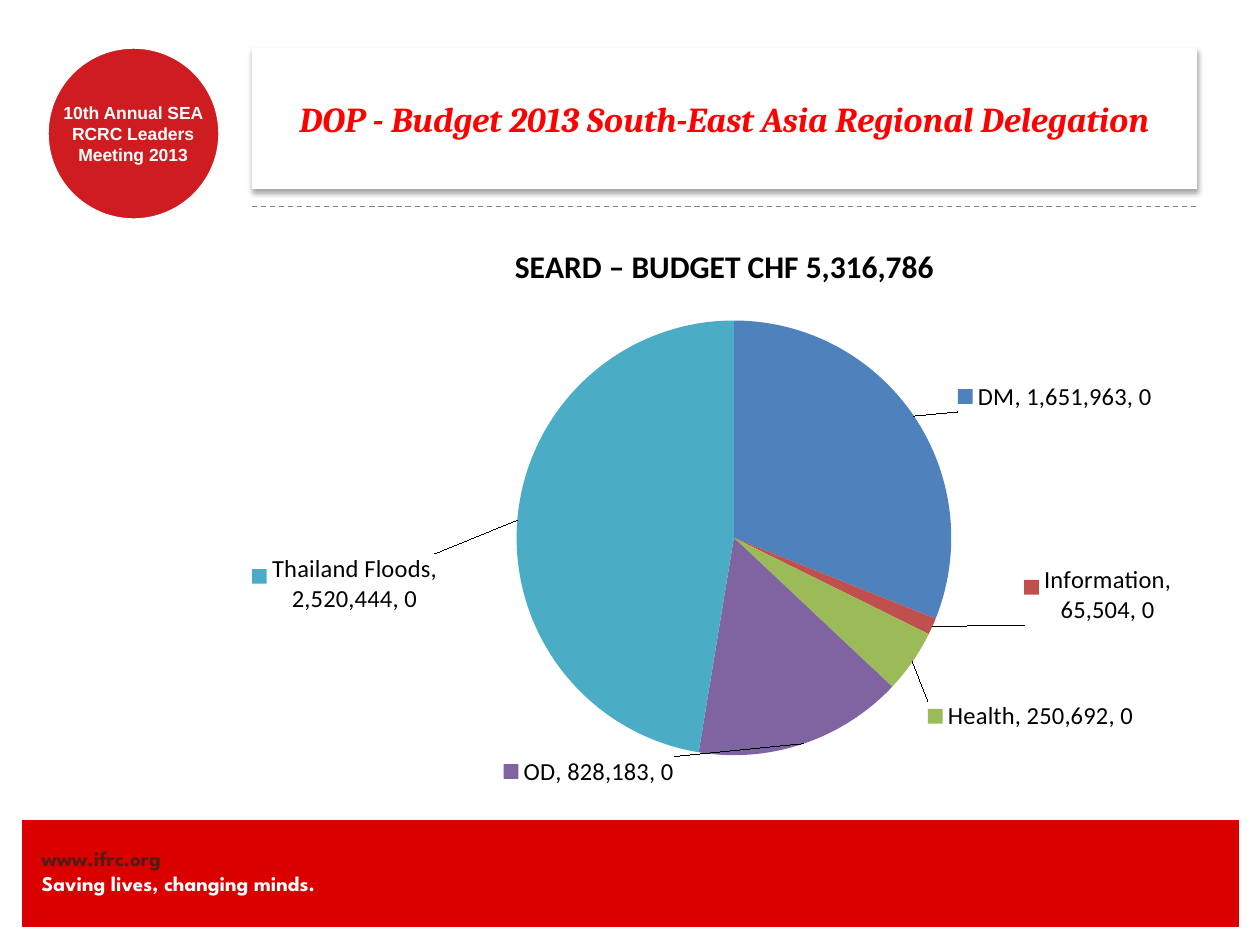
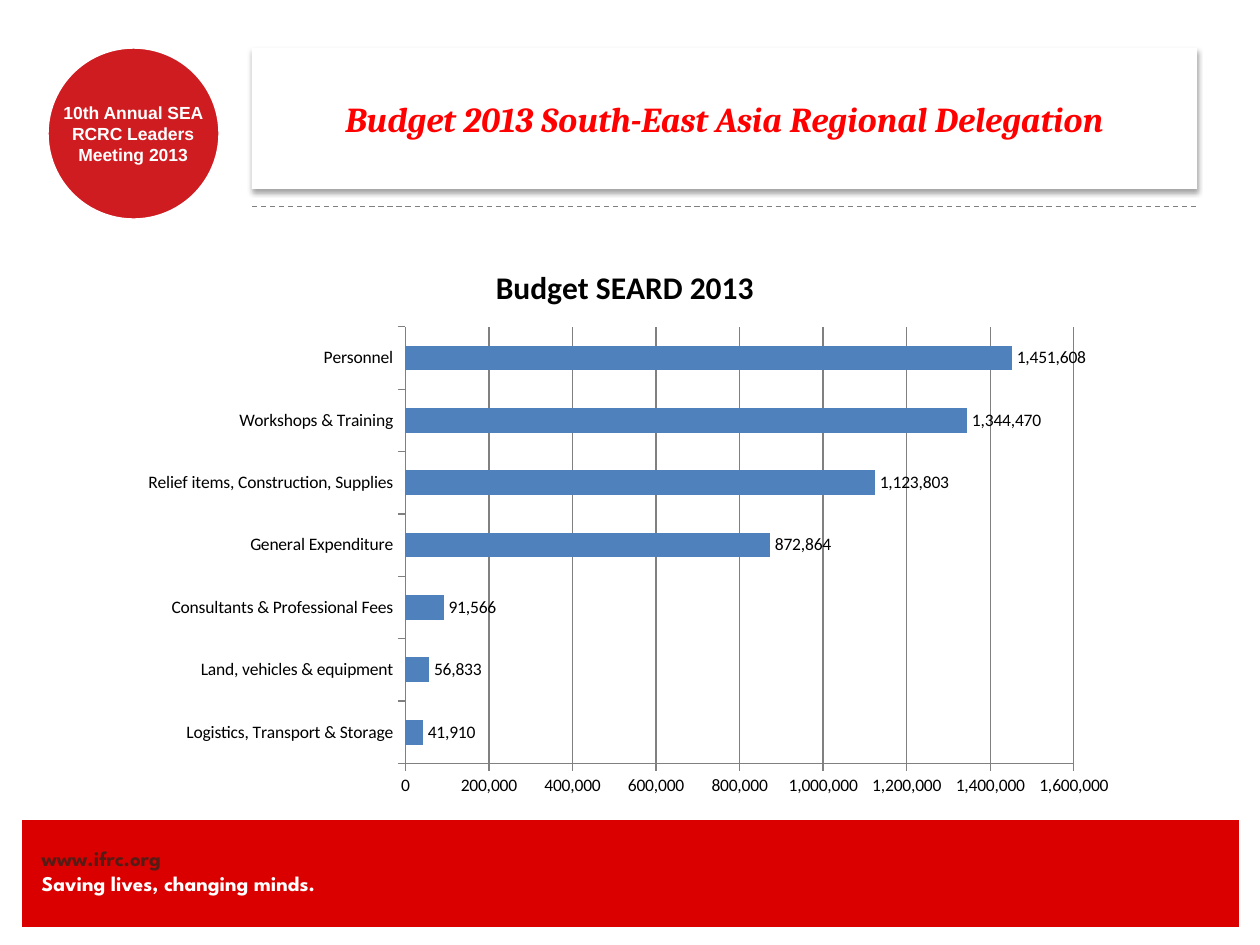
from lxml import etree
from pptx import Presentation, util as u
from pptx.chart.data import CategoryChartData
from pptx.dml.color import RGBColor
from pptx.enum import chart as ec, dml, shapes, text
from pptx.oxml import parse_xml
from pptx.oxml.ns import nsdecls, qn

Pt = u.Pt
HUES = {
    "band": "DB0000", "badge": "CF1C21", "title": "FF0000", "link": "551C15",
    "rule": "808080", "white": "FFFFFF", "black": "000000",
    "blue": "4F81BD", "red": "C0504D", "green": "9BBB59",
    "purple": "8064A2", "teal": "4BACC6",
}
# Text formats
HEAD = dict(name="Cambria", size=Pt(20), bold=True, italic=True)
SEAL = dict(name="Arial", size=Pt(10), bold=True)
FOOT = dict(name="League Spartan", size=Pt(12), bold=True)
CHART = dict(name="Calibri", size=Pt(10))
LABEL = dict(name="Calibri", size=Pt(14))
CAP = dict(name="Calibri", size=Pt(18), bold=True)

# Pie slices: name, amount, colour, label shift as a share of the chart
SLICES = [
    ("DM", 1651963, "blue", 0.04, 0),
    ("Information", 65504, "red", 0.09, -0.11),
    ("Health", 250692, "green", 0.01, 0.06),
    ("OD", 828183, "purple", -0.32, 0.01),
    ("Thailand Floods", 2520444, "teal", -0.08, 0.11),
]
# Bars, from the bottom up
COSTS = {
    "Logistics, Transport & Storage": 41910,
    "Land, vehicles & equipment": 56833,
    "Consultants & Professional Fees": 91566,
    "General Expenditure": 872864,
    "Relief items, Construction, Supplies": 1123803,
    "Workshops & Training": 1344470,
    "Personnel": 1451608,
}


def hue(name):
    return RGBColor.from_string(HUES[name])


def put(obj, vals):
    for key, val in vals.items():
        setattr(obj, key, val)


def ink(font, form, color):
    put(font, form)
    font.color.rgb = hue(color)


def spot(x, y, w=None, h=None):
    """Manual layout; with a size it places the inner plot area."""
    parts = [("x", x), ("y", y)]
    if w:
        parts = ([("layoutTarget", "inner"), ("xMode", "edge"), ("yMode", "edge")]
                 + parts + [("w", w), ("h", h)])
    body = "".join(f'<c:{tag} val="{val}"/>' for tag, val in parts)
    return f"<c:layout {nsdecls('c')}><c:manualLayout>{body}</c:manualLayout></c:layout>"


class Deck:
    def __init__(self):
        self.prs = Presentation()
        put(self.prs, dict(slide_width=Pt(720), slide_height=Pt(540)))
        self.slide = None

    def shape(self, kind, box, fill, edge=None, width=0.75):
        item = self.slide.shapes.add_shape(kind, *map(Pt, box))
        item.shadow.inherit = False
        item.fill.solid()
        item.fill.fore_color.rgb = hue(fill)
        if edge:
            item.line.color.rgb = hue(edge)
            item.line.width = Pt(width)
        else:
            item.line.fill.background()
        return item

    def words(self, frame, lines, form, align, pitch=None):
        put(frame, dict(word_wrap=True, vertical_anchor=text.MSO_ANCHOR.MIDDLE))
        for i, (line, color) in enumerate(lines):
            para = frame.add_paragraph() if i else frame.paragraphs[0]
            put(para, dict(text=line, alignment=align, line_spacing=pitch))
            ink(para.runs[0].font, form, color)

    def label(self, box, lines, form, align, pitch=None):
        frame = self.slide.shapes.add_textbox(*map(Pt, box)).text_frame
        put(frame, dict.fromkeys(
            ("margin_left", "margin_top", "margin_right", "margin_bottom"), 0))
        self.words(frame, lines, form, align, pitch)

    def rule(self, y):
        line = self.slide.shapes.add_connector(
            shapes.MSO_CONNECTOR.STRAIGHT, Pt(144), Pt(y), Pt(684), Pt(y))
        line.line.color.rgb = hue("rule")
        put(line.line, dict(width=Pt(0.75), dash_style=dml.MSO_LINE.DASH))
        etree.SubElement(line._element.spPr, qn("a:effectLst"))

    def page(self, title):
        self.slide = self.prs.slides.add_slide(self.prs.slide_layouts[6])
        left, mid = text.PP_ALIGN.LEFT, text.PP_ALIGN.CENTER
        # Footer band
        self.shape(shapes.MSO_SHAPE.RECTANGLE, (12.2, 468, 696.2, 61.9), "band", "white")
        self.label((23.8, 483.1, 246.2, 28.8),
                   [("www.ifrc.org", "link"),
                    ("Saving lives, changing minds.", "white")], FOOT, left)
        # Round badge
        self.shape(shapes.MSO_SHAPE.OVAL, (26.6, 26.6, 99.4, 99.4), "badge", "white", 2.5)
        self.label((31, 58.3, 90, 36),
                   [("10th Annual SEA RCRC Leaders Meeting 2013", "white")],
                   SEAL, mid, Pt(12.2))
        # Title card between dashed rules
        for y in (28, 118):
            self.rule(y)
        card = self.shape(shapes.MSO_SHAPE.RECTANGLE, (144, 27.4, 540, 80.6), "white")
        glow = card._element.spPr.find(qn("a:effectLst"))
        glow.append(parse_xml(
            f'<a:outerShdw {nsdecls("a")} blurRad="{Pt(3.1)}" dist="{Pt(1.8)}" '
            f'dir="5400000" rotWithShape="0"><a:srgbClr val="{HUES["black"]}">'
            '<a:alpha val="35000"/></a:srgbClr></a:outerShdw>'))
        self.words(card.text_frame, [(title, "title")], HEAD, mid)

    def chart(self, kind, box, title, name, data, plot):
        src = CategoryChartData(number_format="#,##0")
        src.categories = list(data)
        src.add_series(name, list(data.values()))
        chart = self.slide.shapes.add_chart(kind, *map(Pt, box), src).chart
        chart.has_legend = False
        ink(chart.font, CHART, "black")
        frame = chart.chart_title.text_frame
        frame.text = title
        ink(frame.paragraphs[0].runs[0].font, CAP, "black")
        chart.chart_title.include_in_layout = False
        area = chart._chartSpace.chart.plotArea
        for old in area.findall(qn("c:layout")):
            area.remove(old)
        area.insert(0, parse_xml(spot(*plot)))
        return chart

    def pie(self, box, title, slices, plot):
        data = {name: val for name, val, *_ in slices}
        chart = self.chart(ec.XL_CHART_TYPE.PIE, box, title, "Series 1", data, plot)
        chart.plots[0].vary_by_categories = True
        row = chart.plots[0].series[0]
        for i, (_, _, color, _, _) in enumerate(slices):
            fill = row.points[i].format.fill
            fill.solid()
            fill.fore_color.rgb = hue(color)
        # Labels with keys, moved off the rim, on leader lines
        flags = "".join(f'<c:show{tag} val="{val}"/>' for tag, val in (
            ("LegendKey", 1), ("Val", 1), ("CatName", 1),
            ("SerName", 0), ("Percent", 1), ("BubbleSize", 0)))
        tail = f'<c:dLblPos val="outEnd"/>{flags}<c:separator>, </c:separator>'
        each = "".join(f'<c:dLbl><c:idx val="{i}"/>{spot(x, y)}{tail}</c:dLbl>'
                       for i, (*_, x, y) in enumerate(slices))
        row._element.find(qn("c:cat")).addprevious(parse_xml(
            f'<c:dLbls {nsdecls("c")}>{each}<c:numFmt formatCode="#,##0" '
            f'sourceLinked="0"/>{tail}<c:showLeaderLines val="1"/></c:dLbls>'))
        ink(row.data_labels.font, LABEL, "black")
        for i in range(len(slices)):
            ink(row.points[i].data_label.font, LABEL, "black")

    def bars(self, box, title, data, plot):
        chart = self.chart(ec.XL_CHART_TYPE.BAR_CLUSTERED, box, title, title, data, plot)
        group = chart.plots[0]
        put(group, dict(gap_width=150, vary_by_categories=False, has_data_labels=True))
        fill = group.series[0].format.fill
        fill.solid()
        fill.fore_color.rgb = hue("blue")
        put(group.data_labels, dict(
            show_value=True, number_format="#,##0", number_format_is_linked=False,
            position=ec.XL_LABEL_POSITION.OUTSIDE_END))
        ink(group.data_labels.font, CHART, "black")
        cats, vals = chart.category_axis, chart.value_axis
        put(vals, dict(minimum_scale=0, maximum_scale=1600000, major_unit=200000,
                       has_major_gridlines=True))
        put(vals.tick_labels, dict(number_format="#,##0", number_format_is_linked=False))
        for axis in (cats, vals):
            axis.major_tick_mark = ec.XL_TICK_MARK.OUTSIDE
            ink(axis.tick_labels.font, CHART, "black")
        for part in (cats, vals, vals.major_gridlines):
            part.format.line.color.rgb = hue("rule")
            part.format.line.width = Pt(0.75)


def main():
    deck = Deck()

    # Budget by programme
    deck.page("DOP - Budget 2013 South-East Asia Regional Delegation")
    deck.pie((144, 126, 540, 336), "SEARD – BUDGET CHF 5,316,786",
             SLICES, (0.28, 0.17, 0.46, 0.74))

    # Budget by cost type
    deck.page("Budget 2013 South-East Asia Regional Delegation")
    deck.bars((72, 138.2, 570.2, 324), "Budget SEARD 2013",
              COSTS, (0.28, 0.15, 0.67, 0.77))

    deck.prs.save("out.pptx")


if __name__ == "__main__":
    main()
